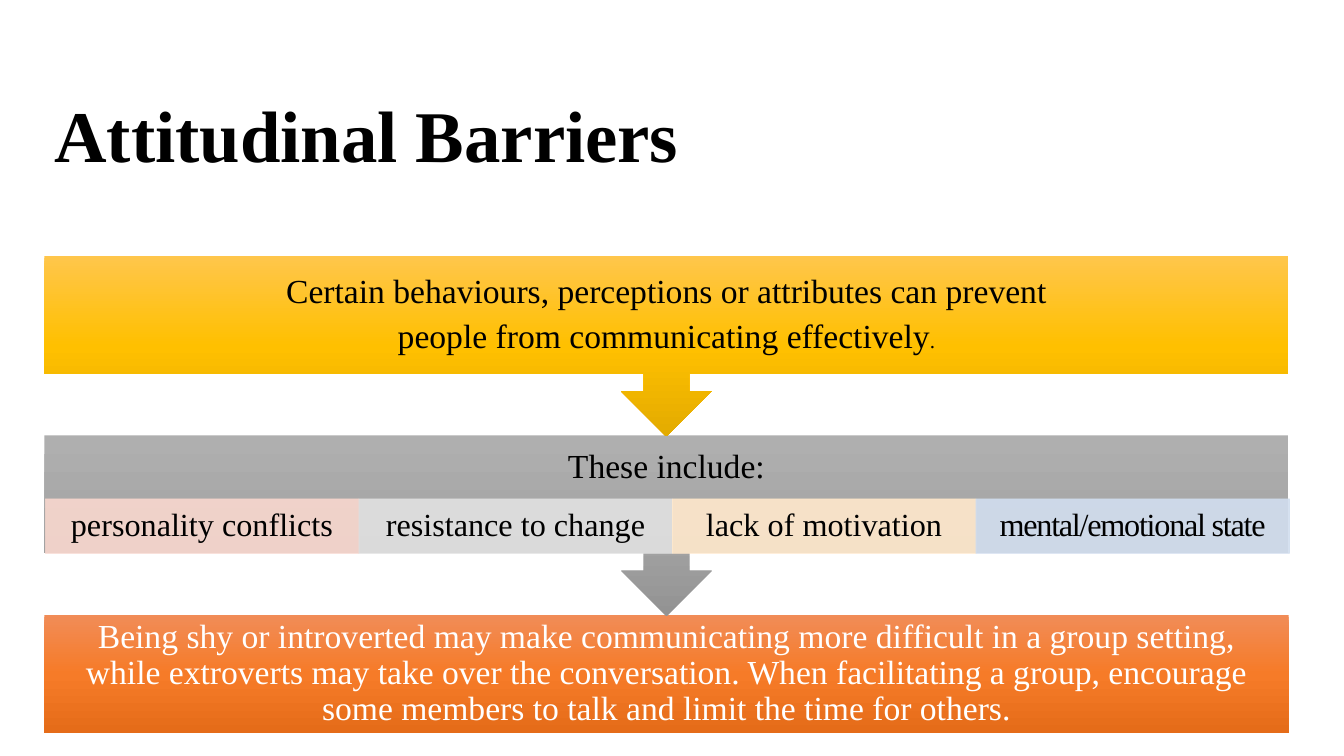
from lxml import etree
from pptx import Presentation
from pptx.dml.color import RGBColor as Rgb
from pptx.enum.shapes import MSO_SHAPE as Kind
from pptx.enum.text import MSO_ANCHOR as Anchor, PP_ALIGN as Align
from pptx.oxml import parse_xml
from pptx.oxml.ns import nsdecls, qn
from pptx.util import Inches, Pt

# Content
TITLE = "Attitudinal Barriers"
INTRO = [
    [("Certain behaviours, perceptions or attributes can prevent", 24)],
    [("people from communicating effectively", 24), (".", 15)],
]
LEAD = [[("These include:", 24)]]
CLOSE = [[(
    "Being shy or introverted may make communicating more difficult in a group "
    "setting, while extroverts may take over the conversation. When facilitating "
    "a group, encourage some members to talk and limit the time for others.", 24)]]
# label, fill, width, letter spacing in points
CELLS = [
    ("personality conflicts", "rose", 3.11, 0),
    ("resistance to change", "silver", 3.11, 0),
    ("lack of motivation", "cream", 3.01, 0),
    ("mental/emotional state", "sky", 3.11, -0.9),
]

COLORS = {
    "black": "000000", "white": "FFFFFF",
    "rose": "F8D7CE", "silver": "E1E1E1", "cream": "FFE8CC", "sky": "D2DEEF",
}
GRADS = {
    "gold": ("FFC64B", "FFC000", "E3AB00"),
    "gray": ("AFAFAF", "A5A5A5", "939393"),
    "orange": ("F18C57", "F67B28", "E56C19"),
}
FONT = "Times New Roman"

# Layout, in inches
LEFT, WIDTH = 0.44, 12.34
TOP, STEP = 2.54, 1.78
BAND, CALL, HEAD, CELL = 1.17, 1.79, 0.63, 0.54

deck = Presentation()
deck.slide_width, deck.slide_height = Inches(13.33), Inches(7.5)
slide = deck.slides.add_slide(deck.slide_layouts[6])


def add_box(kind, *at):
    shape = slide.shapes.add_shape(kind, *map(Inches, at))
    shape.shadow.inherit = False
    shape.line.fill.background()
    return shape


def add_label(*at):
    return slide.shapes.add_textbox(*map(Inches, at))


def set_grad(shape, name):
    stops = "".join(
        f'<a:gs pos="{i * 50000}"><a:srgbClr val="{color}"/></a:gs>'
        for i, color in enumerate(GRADS[name]))
    grad = parse_xml(
        f'<a:gradFill {nsdecls("a")} rotWithShape="0"><a:gsLst>{stops}</a:gsLst>'
        '<a:lin ang="5400000" scaled="0"/></a:gradFill>')
    shape.element.spPr.find(qn("a:prstGeom")).addnext(grad)


def write(shape, lines, color="black", pad=(0.19, 0.19), align=Align.CENTER,
          bold=False, gap=0, track=0):
    frame = shape.text_frame
    frame.word_wrap = True
    frame.vertical_anchor = Anchor.MIDDLE
    frame.margin_left = frame.margin_right = Inches(pad[0])
    frame.margin_top = frame.margin_bottom = Inches(pad[1])
    for i, line in enumerate(lines):
        para = frame.add_paragraph() if i else frame.paragraphs[0]
        para.alignment, para.line_spacing = align, 0.9
        para.space_after = Pt(gap if i < len(lines) - 1 else 0)
        para.font.name, para.font.bold = FONT, bold
        para.font.color.rgb = Rgb.from_string(COLORS[color])
        for text, size in line:
            run = para.add_run()
            run.text, run.font.size = text, Pt(size)
            if track:
                run.font._element.set("spc", str(round(track * 100)))


def set_alpha(shape):
    for color in shape.element.spPr.iter(qn("a:srgbClr")):
        etree.SubElement(color, qn("a:alpha")).set("val", "90000")


# Title
write(add_label(LEFT, 0.99, 9.58, 0.77), [[(TITLE, 52)]],
      pad=(0.1, 0.05), align=Align.LEFT, bold=True)

# Closing band
band = add_box(Kind.RECTANGLE, LEFT, TOP + 2 * STEP, WIDTH, BAND)
set_grad(band, "orange")
write(band, CLOSE, "white")

# Callouts pointing down, lower one first
for row, grad, lines, high in ((1, "gray", LEAD, HEAD), (0, "gold", INTRO, BAND)):
    top = TOP + row * STEP
    call = add_box(Kind.UP_ARROW_CALLOUT, LEFT, top, WIDTH, CALL)
    call.rotation = 180
    set_grad(call, grad)
    write(add_label(LEFT, top, WIDTH, high), lines, gap=6)

# Row of barriers
x = LEFT + 0.01
for label, fill, wide, track in CELLS:
    cell = add_box(Kind.RECTANGLE, x, TOP + STEP + HEAD, wide, CELL)
    tint = Rgb.from_string(COLORS[fill])
    cell.fill.solid()
    cell.fill.fore_color.rgb = tint
    cell.line.color.rgb = tint
    cell.line.width = Pt(0.5)
    set_alpha(cell)
    write(cell, [[(label, 23)]], pad=(0.18, 0.03), track=track)
    x += wide

deck.save("out.pptx")
